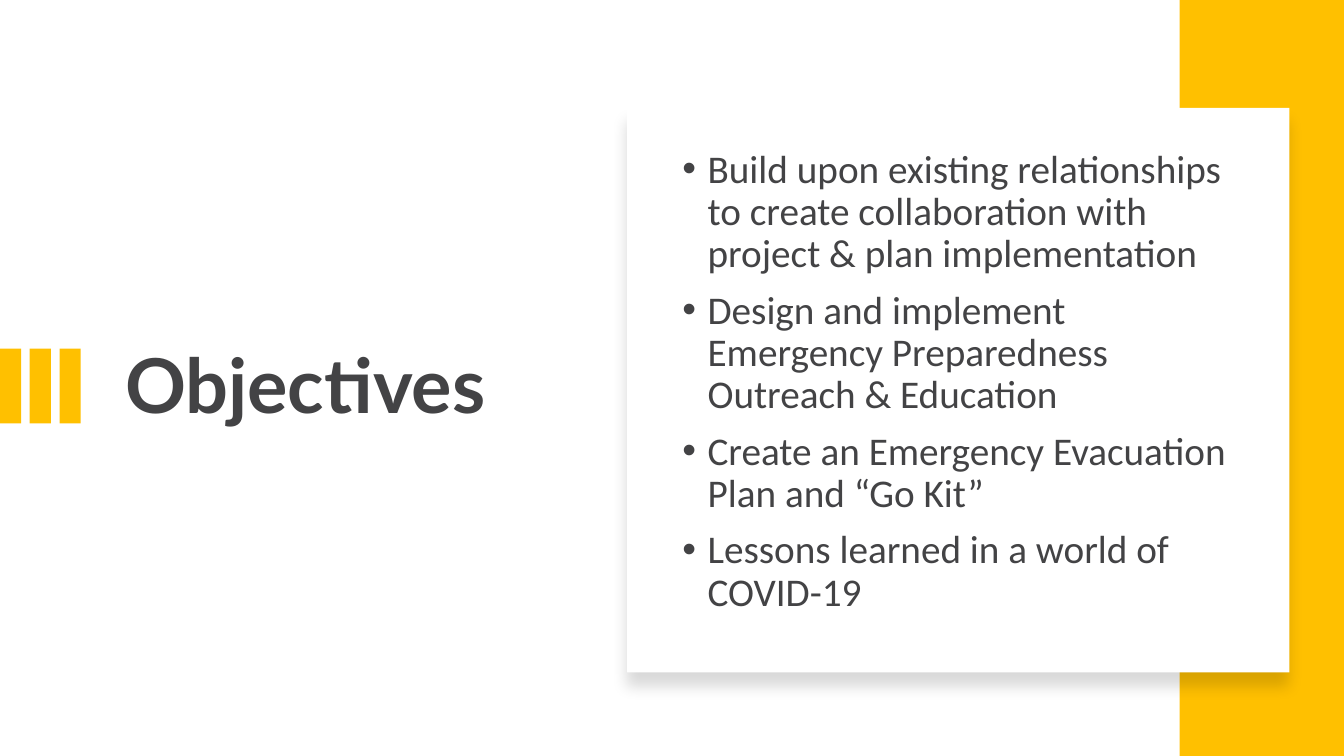
from lxml.etree import SubElement
from pptx import Presentation
from pptx.dml.color import RGBColor
from pptx.enum.shapes import MSO_SHAPE as Shape
from pptx.enum.text import MSO_ANCHOR as Anchor, PP_ALIGN as Align
from pptx.oxml.ns import qn
from pptx.util import Inches, Pt

GOLD = RGBColor(0xFF, 0xC0, 0x00)
WHITE = RGBColor(0xFF, 0xFF, 0xFF)
CHARCOAL = RGBColor(0x43, 0x43, 0x45)

OBJECTIVES = [
    "Build upon existing relationships to create collaboration with project & plan implementation",
    "Design and implement Emergency Preparedness Outreach & Education",
    "Create an Emergency Evacuation Plan and “Go Kit”",
    "Lessons learned in a world of COVID-19",
]


def add_block(shapes, left, top, width, height, color):
    block = shapes.add_shape(
        Shape.RECTANGLE, Inches(left), Inches(top), Inches(width), Inches(height)
    )
    block.shadow.inherit = False
    block.fill.solid()
    block.fill.fore_color.rgb = color
    block.line.fill.background()
    return block


def add_bullet(paragraph, indent):
    properties = paragraph._p.get_or_add_pPr()
    properties.set("marL", str(Inches(indent)))
    properties.set("indent", str(-Inches(indent)))
    SubElement(properties, qn("a:buFont"), typeface="Arial")
    SubElement(properties, qn("a:buChar"), char="•")


def write(paragraph, text, *, size, font, bold=False, bullet_indent=None, space_before=0):
    if bullet_indent:
        add_bullet(paragraph, bullet_indent)
    paragraph.text = text
    paragraph.alignment = Align.LEFT
    paragraph.line_spacing = 0.9
    paragraph.space_before = Pt(space_before)
    paragraph.font.size = Pt(size)
    paragraph.font.name = font
    paragraph.font.bold = bold
    paragraph.font.color.rgb = CHARCOAL


def add_soft_shadow(card):
    effects = card._element.spPr.find(qn("a:effectLst"))
    shadow = SubElement(
        effects, qn("a:outerShdw"), blurRad=str(Pt(11)), dist=str(Pt(10)),
        dir=str(90 * 60000), algn="t", rotWithShape="0",
    )
    color = SubElement(shadow, qn("a:srgbClr"), val="000000")
    SubElement(color, qn("a:alpha"), val="15000")


def place_title(slide, left, top, width, height):
    title = slide.shapes.title
    title.left, title.top = Inches(left), Inches(top)
    title.width, title.height = Inches(width), Inches(height)
    title.text_frame.word_wrap = True
    title.text_frame.vertical_anchor = Anchor.MIDDLE
    write(title.text_frame.paragraphs[0], "Objectives", size=54, font="Lato", bold=True)


def add_accent_bars(slide, left, top, width, height, count=3, bar_width=0.21):
    accent = slide.shapes.add_group_shape()
    pitch = (width - bar_width) / (count - 1)
    for index in range(count):
        add_block(accent.shapes, left + index * pitch, top, bar_width, height, GOLD)


def add_objectives_card(slide, left, top, width, height):
    card = add_block(slide.shapes, left, top, width, height, WHITE)
    add_soft_shadow(card)
    objectives = slide.shapes.add_textbox(
        Inches(left + 0.45), Inches(top), Inches(width - 0.82), Inches(height - 0.16)
    ).text_frame
    objectives.word_wrap = True
    objectives.vertical_anchor = Anchor.MIDDLE
    for index, objective in enumerate(OBJECTIVES):
        paragraph = objectives.add_paragraph() if index else objectives.paragraphs[0]
        write(paragraph, objective, size=28, font="Calibri", bullet_indent=0.25,
              space_before=10 if index else 0)


def main():
    deck = Presentation()
    deck.slide_width, deck.slide_height = Inches(13.33), Inches(7.5)
    slide = deck.slides.add_slide(deck.slide_layouts[5])
    place_title(slide, 1.14, 1.46, 4.26, 4.79)
    add_accent_bars(slide, 0, 3.46, 0.8, 0.74)
    add_block(slide.shapes, 11.7, 0, 1.63, 7.5, GOLD)
    add_objectives_card(slide, 6.22, 1.07, 6.57, 5.6)
    deck.save("out.pptx")


if __name__ == "__main__":
    main()
